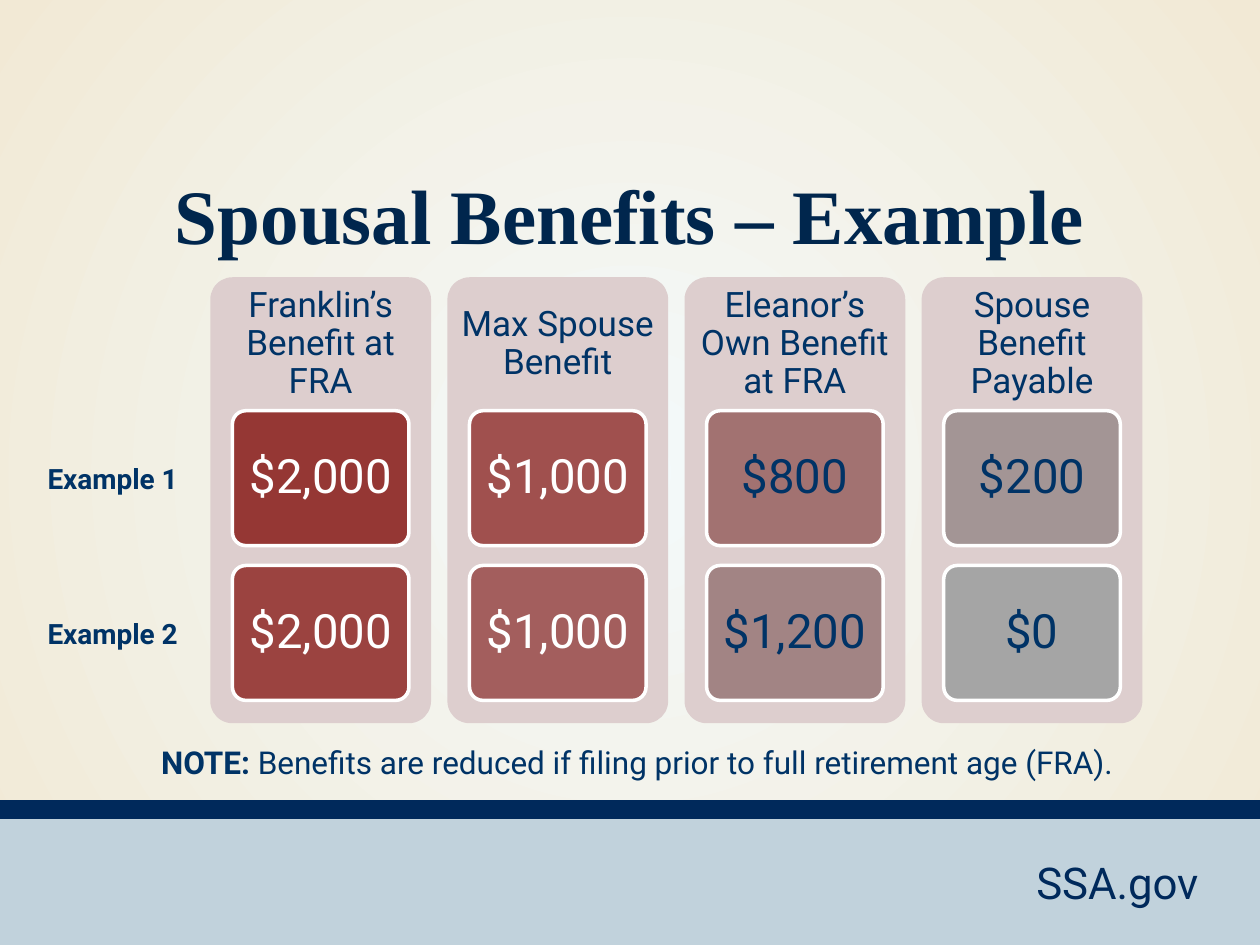
from dataclasses import dataclass

from lxml import etree
from pptx import Presentation
from pptx import util as u
from pptx.dml.color import RGBColor
from pptx.enum import shapes, text
from pptx.oxml import ns


@dataclass(frozen=True)
class Theme:
    body_font: str = "Roboto"
    title_font: str = "Times New Roman"
    glow: str = "F3FAFB"
    edge: str = "F2E9D5"
    footer: str = "C1D2DC"
    navy: str = "00295B"
    title_ink: str = "00264D"
    ink: str = "003366"
    white: str = "FFFFFF"
    panel: str = "DDCECE"
    title_size: int = 44
    amount_size: int = 27
    site_size: int = 25
    heading_size: int = 20
    note_size: int = 18
    label_size: int = 16


class SlideBuilder:
    def __init__(self, slide, theme):
        self.slide = slide
        self.theme = theme

    def backdrop(self):
        fill = self.slide.background.fill
        fill.gradient()
        for stop, position, color in zip(
            fill.gradient_stops, (0, 1), (self.theme.glow, self.theme.edge)
        ):
            stop.position = position
            stop.color.rgb = RGBColor.from_string(color)
        gradient = self.slide.element.find(".//" + ns.qn("a:gradFill"))
        gradient.remove(gradient.find(ns.qn("a:lin")))
        circle = etree.SubElement(gradient, ns.qn("a:path"), {"path": "circle"})
        center = dict.fromkeys("ltrb", "50000")
        etree.SubElement(circle, ns.qn("a:fillToRect"), center)

    def block(self, box, color, rounded=False, outline=None):
        kind = shapes.MSO_SHAPE.ROUNDED_RECTANGLE if rounded else shapes.MSO_SHAPE.RECTANGLE
        block = self.slide.shapes.add_shape(kind, *map(u.Cm, box))
        block.shadow.inherit = False
        block.fill.solid()
        block.fill.fore_color.rgb = RGBColor.from_string(color)
        if rounded:
            block.adjustments[0] = 0.1
        if outline:
            block.line.color.rgb = RGBColor.from_string(outline)
            block.line.width = u.Pt(2)
        else:
            block.line.fill.background()
        return block

    def label(self, shape, words, size, color, font=None, bold=False,
              align=text.PP_ALIGN.CENTER, inset=None, spacing=None):
        frame = shape.text_frame
        frame.text = words
        frame.word_wrap = True
        frame.vertical_anchor = text.MSO_ANCHOR.MIDDLE
        if inset is not None:
            frame.margin_left = frame.margin_right = u.Cm(inset)
            frame.margin_top = frame.margin_bottom = u.Cm(inset)
        paragraph = frame.paragraphs[0]
        paragraph.alignment = align
        if spacing:
            paragraph.line_spacing = spacing
        self.style(paragraph.runs[0], size, color, font, bold)
        return paragraph

    def style(self, run, size, color, font=None, bold=False):
        run.font.name = font or self.theme.body_font
        run.font.size = u.Pt(size)
        run.font.bold = bold
        run.font.color.rgb = RGBColor.from_string(color)

    def caption(self, box, words, size, color, **options):
        caption = self.slide.shapes.add_textbox(*map(u.Cm, box))
        return self.label(caption, words, size, color, **options)

    def card(self, box, amount, fill, color):
        card = self.block(box, fill, rounded=True, outline=self.theme.white)
        self.label(card, amount, self.theme.amount_size, color, inset=0.25, spacing=0.9)


BENEFITS = [
    ("Franklin’s Benefit at FRA", Theme.white, [("$2,000", "953734"), ("$2,000", "9B4340")]),
    ("Max Spouse Benefit", Theme.white, [("$1,000", "A0504E"), ("$1,000", "A35E5D")]),
    ("Eleanor’s Own Benefit at FRA", Theme.ink, [("$800", "A27271"), ("$1,200", "A28484")]),
    ("Spouse Benefit Payable", Theme.ink, [("$200", "A39595"), ("$0", "A5A5A5")]),
]
PANEL_LEFT, PANEL_TOP, PANEL_WIDTH, PANEL_HEIGHT = 4.24, 5.59, 4.45, 8.99
PANEL_STEP = 4.78
HEADING_HEIGHT = 2.69
CARD_WIDTH, CARD_HEIGHT, CARD_STEP = 3.56, 2.72, 3.12
CARD_TOP = PANEL_TOP + HEADING_HEIGHT
CARD_INDENT = (PANEL_WIDTH - CARD_WIDTH) / 2
LABEL_HEIGHT = 0.94


def main():
    deck = Presentation()
    deck.slide_width, deck.slide_height = u.Cm(25.4), u.Cm(19.05)
    theme = Theme()
    page = SlideBuilder(deck.slides.add_slide(deck.slide_layouts[6]), theme)

    page.backdrop()
    page.block((0, 16.38, 25.4, 2.67), theme.footer)
    page.block((0, 16.13, 25.4, 0.38), theme.navy)
    page.caption((19.91, 17.12, 5.23, 1.32), "SSA.gov", theme.site_size, theme.navy)
    page.caption((0, 3.02, 25.4, 2.57), "Spousal Benefits – Example", theme.title_size,
                 theme.title_ink, font=theme.title_font, bold=True)

    for column, (heading, amount_color, amounts) in enumerate(BENEFITS):
        left = PANEL_LEFT + column * PANEL_STEP
        page.block((left, PANEL_TOP, PANEL_WIDTH, PANEL_HEIGHT), theme.panel, rounded=True)
        page.caption((left, PANEL_TOP, PANEL_WIDTH, HEADING_HEIGHT), heading,
                     theme.heading_size, theme.ink, inset=0.2, spacing=0.9)
        for row, (amount, fill) in enumerate(amounts):
            top = CARD_TOP + row * CARD_STEP
            page.card((left + CARD_INDENT, top, CARD_WIDTH, CARD_HEIGHT),
                      amount, fill, amount_color)

    for row, example in enumerate(("Example 1", "Example 2")):
        top = CARD_TOP + row * CARD_STEP + (CARD_HEIGHT - LABEL_HEIGHT) / 2
        page.caption((0.71, top, 3.43, LABEL_HEIGHT), example, theme.label_size,
                     theme.ink, bold=True, align=text.PP_ALIGN.LEFT)

    note = page.caption((1.04, 14.86, 23.62, 1.02), "NOTE: ", theme.note_size,
                        theme.ink, bold=True)
    explanation = note.add_run()
    explanation.text = "Benefits are reduced if filing prior to full retirement age (FRA)."
    page.style(explanation, theme.note_size, theme.ink)

    deck.save("out.pptx")


if __name__ == "__main__":
    main()
